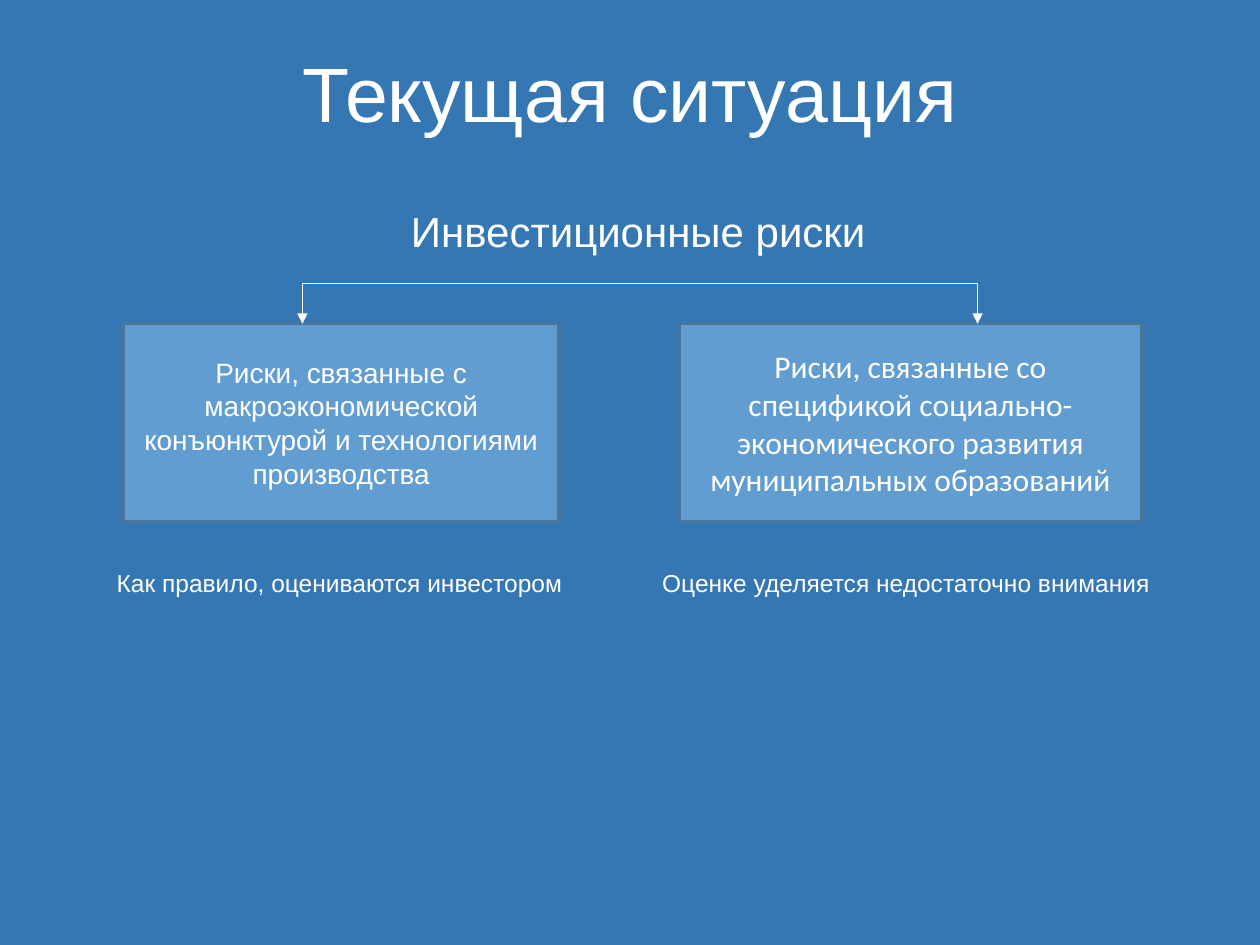
"""Build a slide that splits investment risks into two groups."""

from dataclasses import dataclass

import pptx
import pptx.dml.color
import pptx.enum.shapes
import pptx.enum.text
import pptx.oxml.ns
import pptx.slide
import pptx.text.text
import pptx.util
from lxml import etree

Pt = pptx.util.Pt
RGBColor = pptx.dml.color.RGBColor
Align = pptx.enum.text.PP_ALIGN
Anchor = pptx.enum.text.MSO_ANCHOR

BACKGROUND = RGBColor(0x34, 0x77, 0xB2)
BOX_FILL = RGBColor(0x62, 0x9D, 0xD1)
BOX_BORDER = RGBColor(0x49, 0x74, 0x9B)
WHITE = RGBColor(0xFF, 0xFF, 0xFF)

BOX_TOP = 185
BOX_HEIGHT = 113
BRANCH_TOP = 162
ASSESSMENT_TOP = 321


@dataclass(frozen=True)
class RiskGroup:
    description: str
    font_name: str
    font_size: float
    left: float
    width: float
    arrow_x: float
    assessment: str
    assessment_left: float
    assessment_width: float


RISK_GROUPS = (
    RiskGroup(
        "Риски, связанные с макроэкономической конъюнктурой и технологиями производства",
        "Arial", 16, 70.5, 249, 172.8,
        "Как правило, оцениваются инвестором", 59.6, 269.3,
    ),
    RiskGroup(
        "Риски, связанные со спецификой социально-экономического развития "
        "муниципальных образований",
        "Calibri", 18, 388.3, 264, 558.6,
        "Оценке уделяется недостаточно внимания", 371.3, 295.2,
    ),
)


def write_text(
    frame: pptx.text.text.TextFrame,
    text: str,
    size: float,
    font_name: str = "Arial",
    alignment: Align = Align.CENTER,
) -> None:
    frame.text = text
    paragraph = frame.paragraphs[0]
    paragraph.alignment = alignment
    paragraph.font.size = Pt(size)
    paragraph.font.name = font_name
    paragraph.font.color.rgb = WHITE


def add_label(
    slide: pptx.slide.Slide,
    text: str,
    left: float,
    top: float,
    width: float,
    height: float,
    size: float,
    alignment: Align,
) -> None:
    label = slide.shapes.add_textbox(Pt(left), Pt(top), Pt(width), Pt(height))
    label.text_frame.word_wrap = False
    label.text_frame.auto_size = pptx.enum.text.MSO_AUTO_SIZE.SHAPE_TO_FIT_TEXT
    write_text(label.text_frame, text, size, alignment=alignment)


def add_branch(
    slide: pptx.slide.Slide,
    start: tuple[float, float],
    end: tuple[float, float],
    arrow: bool = False,
) -> None:
    branch = slide.shapes.add_connector(
        pptx.enum.shapes.MSO_CONNECTOR.STRAIGHT,
        *(Pt(coordinate) for coordinate in start + end),
    )
    branch.line.color.rgb = WHITE
    branch.line.width = Pt(0.75)
    qn = pptx.oxml.ns.qn
    properties = branch._element.spPr
    if arrow:
        outline = properties.find(qn("a:ln"))
        etree.SubElement(outline, qn("a:tailEnd"), type="triangle")
    etree.SubElement(properties, qn("a:effectLst"))


def add_risk_group(slide: pptx.slide.Slide, group: RiskGroup) -> None:
    box = slide.shapes.add_shape(
        pptx.enum.shapes.MSO_SHAPE.RECTANGLE,
        Pt(group.left), Pt(BOX_TOP), Pt(group.width), Pt(BOX_HEIGHT),
    )
    box.shadow.inherit = False
    box.fill.solid()
    box.fill.fore_color.rgb = BOX_FILL
    box.line.color.rgb = BOX_BORDER
    box.line.width = Pt(2)
    box.text_frame.word_wrap = True
    box.text_frame.vertical_anchor = Anchor.MIDDLE
    write_text(box.text_frame, group.description, group.font_size, group.font_name)
    add_branch(slide, (group.arrow_x, BRANCH_TOP), (group.arrow_x, BOX_TOP), arrow=True)
    add_label(
        slide, group.assessment, group.assessment_left, ASSESSMENT_TOP,
        group.assessment_width, 24, 14, Align.LEFT,
    )


def main() -> None:
    presentation = pptx.Presentation()
    presentation.slide_width = Pt(720)
    presentation.slide_height = Pt(540)
    slide = presentation.slides.add_slide(presentation.slide_layouts[5])
    slide.background.fill.solid()
    slide.background.fill.fore_color.rgb = BACKGROUND

    title = slide.shapes.title
    title.left, title.top, title.width, title.height = Pt(36), Pt(21.6), Pt(648), Pt(61.2)
    title.text_frame.vertical_anchor = Anchor.MIDDLE
    write_text(title.text_frame, "Текущая ситуация", 44)

    add_label(slide, "Инвестиционные риски", 227.5, 113.8, 274.3, 36, 24, Align.CENTER)
    first, last = RISK_GROUPS
    add_branch(slide, (first.arrow_x, BRANCH_TOP), (last.arrow_x, BRANCH_TOP))
    for group in RISK_GROUPS:
        add_risk_group(slide, group)

    presentation.save("out.pptx")


if __name__ == "__main__":
    main()
